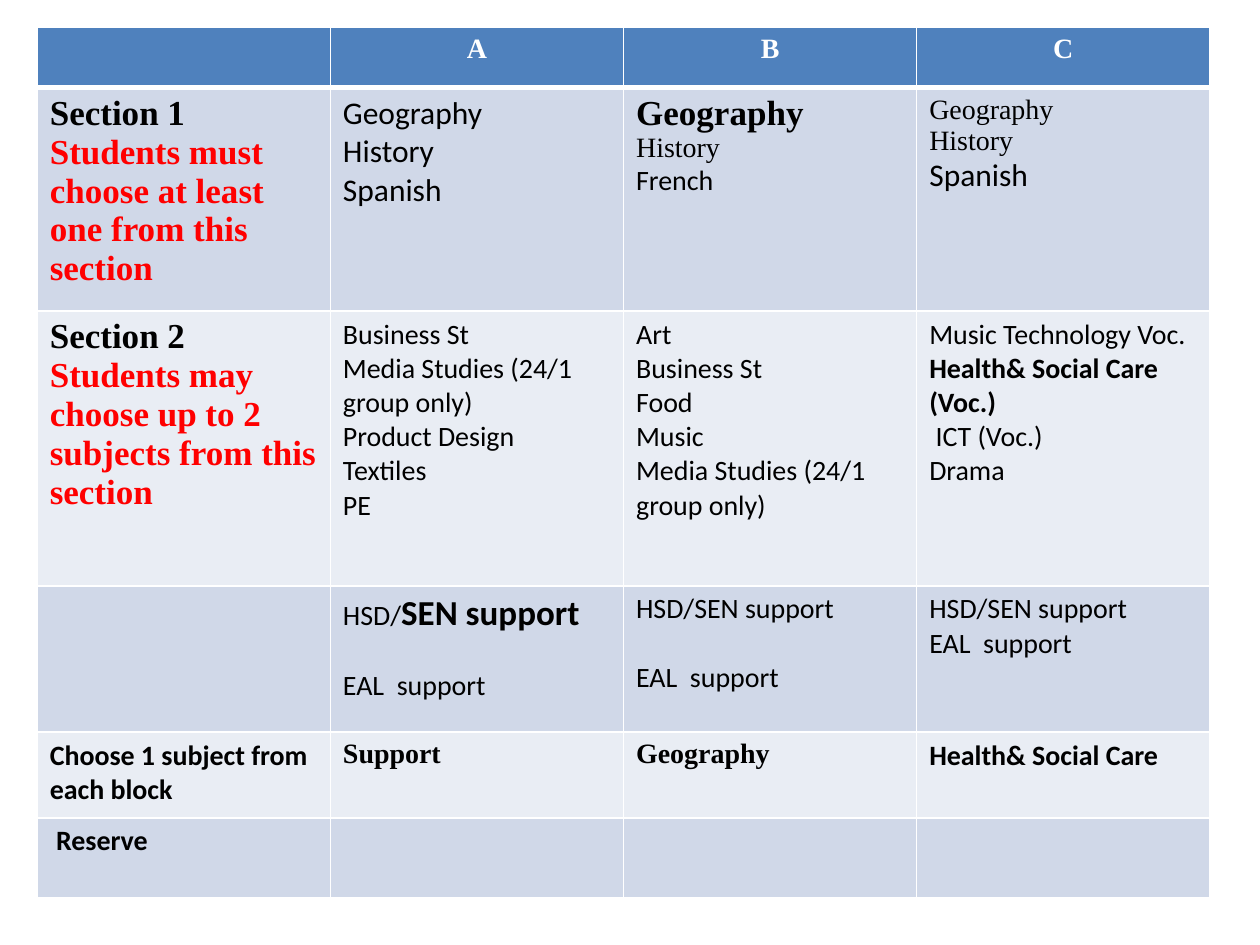
from dataclasses import dataclass
from typing import Optional

import pptx
import pptx.dml.color
import pptx.enum.text
import pptx.oxml
import pptx.oxml.ns
import pptx.util

Cm, Pt = pptx.util.Cm, pptx.util.Pt
RGB = pptx.dml.color.RGBColor

BLUE = RGB(0x4F, 0x81, 0xBD)
DARK = RGB(0xD0, 0xD8, 0xE8)
PALE = RGB(0xE9, 0xED, 0xF4)
WHITE = RGB(0xFF, 0xFF, 0xFF)
BLACK = RGB(0, 0, 0)
RED = RGB(0xFF, 0, 0)
SANS, SERIF = "Calibri", "Times New Roman"


@dataclass
class Line:
    text: str
    size: int = 16
    font: str = SANS
    bold: bool = False
    color: RGB = BLACK
    gap: float = 0
    tail: Optional["Line"] = None


def plain(*texts: str, size: int = 16, font: str = SANS) -> list[Line]:
    return [Line(text, size, font) for text in texts]


def strong(text: str, size: int = 16, font: str = SANS,
           color: RGB = BLACK) -> Line:
    return Line(text, size, font, True, color)


def label(name: str, rule: str) -> list[Line]:
    return [strong(name, 20, SERIF), strong(rule, 20, SERIF, RED)]


def style(font, line: Line) -> None:
    font.size, font.name, font.bold = Pt(line.size), line.font, line.bold


def write(cell, lines: list[Line], align) -> None:
    frame = cell.text_frame
    for i, line in enumerate(lines):
        para = frame.paragraphs[0] if i == 0 else frame.add_paragraph()
        para.alignment = align
        para.space_before = Pt(line.gap)
        style(para.font, line)
        for part in filter(None, (line, line.tail)):
            run = para.add_run()
            run.text = part.text
            run.font.color.rgb = part.color
            if line.tail:
                style(run.font, part)


def paint(cell, fill: RGB, top: int, base: int) -> None:
    props = cell._tc.get_or_add_tcPr()
    for side, width in (("L", 1), ("R", 1), ("T", top), ("B", base)):
        props.append(pptx.oxml.parse_xml(
            f'<a:ln{side} {pptx.oxml.ns.nsdecls("a")} w="{Pt(width)}">'
            f'<a:solidFill><a:srgbClr val="{WHITE}"/></a:solidFill>'
            f'</a:ln{side}>'))
    cell.fill.solid()
    cell.fill.fore_color.rgb = fill


# Cell text, row by row
MEDIA = "Media Studies (24/1 group only)"
HELP, EAL = "HSD/SEN support", "EAL  support"
SPACED = Line(EAL, gap=19.5)
ROWS = [
    [[]] + [[strong(name, 16, SERIF, WHITE)] for name in "ABC"],
    [
        label("Section 1",
              "Students must choose at least one from this section"),
        plain("Geography", "History", "Spanish", size=18),
        [strong("Geography", 20, SERIF), Line("History", font=SERIF),
         Line("French")],
        plain("Geography", "History", font=SERIF) + [Line("Spanish", 18)],
    ],
    [
        label("Section 2",
              "Students may choose up to 2 subjects from this section"),
        plain("Business St", MEDIA, "Product Design", "Textiles", "PE"),
        plain("Art", "Business St", "Food", "Music", MEDIA),
        [Line("Music Technology Voc."), strong("Health& Social Care (Voc.)"),
         Line(" ICT (Voc.)"), Line("Drama")],
    ],
    [
        [],
        [Line("HSD/", tail=strong("SEN support", 20)), SPACED],
        [Line(HELP), SPACED],
        plain(HELP, EAL),
    ],
    [
        [strong("Choose 1 subject from each block")],
        [strong("Support", font=SERIF)],
        [strong("Geography", font=SERIF)],
        [strong("Health& Social Care")],
    ],
    [[strong(" Reserve")], [], [], []],
]
HIGH = [1.22, 4.5, 5.54, 2.95, 1.73, 1.6]
WIDE = 5.91


def main() -> None:
    deck = pptx.Presentation()
    deck.slide_width, deck.slide_height = Cm(25.4), Cm(19.05)
    slide = deck.slides.add_slide(deck.slide_layouts[6])

    # Option grid
    grid = slide.shapes.add_table(
        len(ROWS), 4, Cm(0.75), Cm(0.55), Cm(4 * WIDE), Cm(sum(HIGH))).table
    for col in grid.columns:
        col.width = Cm(WIDE)
    ways = pptx.enum.text.PP_ALIGN
    for r, (cells, high) in enumerate(zip(ROWS, HIGH)):
        grid.rows[r].height = Cm(high)
        fill = BLUE if r == 0 else (PALE, DARK)[r % 2]
        align = ways.CENTER if r == 0 else ways.LEFT
        for c, lines in enumerate(cells):
            cell = grid.cell(r, c)
            paint(cell, fill, 3 if r == 1 else 1, 3 if r == 0 else 1)
            write(cell, lines, align)

    deck.save("out.pptx")


if __name__ == "__main__":
    main()
